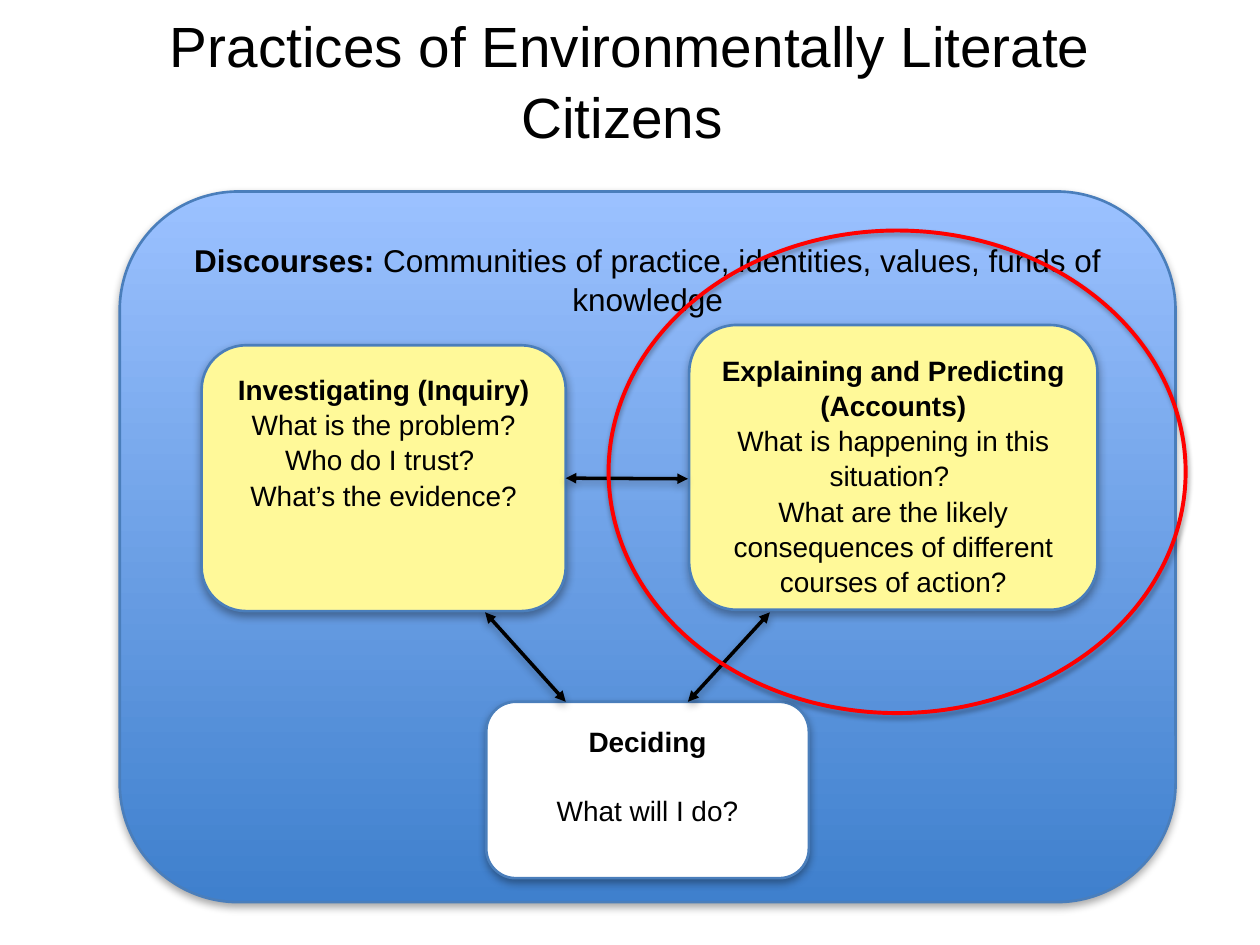
from pptx import Presentation
from pptx.dml.color import RGBColor
from pptx.enum.shapes import MSO_CONNECTOR as CXN, MSO_SHAPE as SHP
from pptx.enum.text import MSO_ANCHOR, MSO_AUTO_SIZE, PP_ALIGN
from pptx.oxml import parse_xml
from pptx.oxml.ns import nsdecls, qn
from pptx.util import Pt
from lxml.etree import SubElement

PX = 9144
FONT = "Arial"
LINE_SPACING = 1.05
BLACK = RGBColor(0x00, 0x00, 0x00)
WHITE = RGBColor(0xFF, 0xFF, 0xFF)
YELLOW = RGBColor(0xFF, 0xF9, 0x99)
RED = RGBColor(0xFF, 0x00, 0x00)
EDGE = RGBColor(0x4A, 0x7E, 0xBB)
LIGHT_BLUE = RGBColor(0x9B, 0xC1, 0xFF)
DEEP_BLUE = RGBColor(0x3F, 0x80, 0xCD)


def emu(*lengths):
    return [n * PX for n in lengths]


def add_shadow(sp, blur=5, dist=2.1):
    sp._element.spPr.append(parse_xml(
        f'<a:effectLst {nsdecls("a")}>'
        f'<a:outerShdw blurRad="{Pt(blur)}" dist="{Pt(dist)}" dir="5400000" rotWithShape="0">'
        '<a:srgbClr val="000000"><a:alpha val="35000"/></a:srgbClr>'
        '</a:outerShdw></a:effectLst>'))


def add_run(p, text, size, bold=False):
    r = p.add_run()
    r.text = text
    r.font.name = FONT
    r.font.size = Pt(size)
    r.font.bold = bold
    r.font.color.rgb = BLACK


def write_paragraphs(tf, paragraphs, size, gap=0):
    for i, runs in enumerate(paragraphs):
        p = tf.paragraphs[0] if i == 0 else tf.add_paragraph()
        p.alignment = PP_ALIGN.CENTER
        p.line_spacing = LINE_SPACING
        p.space_before = Pt(gap if i else 0)
        for text, bold in runs:
            add_run(p, text, size, bold)


def title(s, box):
    sp = s.shapes.title
    sp.left, sp.top, sp.width, sp.height = emu(*box)
    tf = sp.text_frame
    tf.auto_size = MSO_AUTO_SIZE.NONE
    tf.vertical_anchor = MSO_ANCHOR.MIDDLE
    write_paragraphs(tf, [[("Practices of Environmentally Literate Citizens ", False)]], 32.4)


def panel(shapes, box, paragraphs, size, color=None, gap=0):
    sp = shapes.add_shape(SHP.ROUNDED_RECTANGLE, *emu(*box))
    sp.adjustments[0] = 0.167
    if color is None:
        sp.fill.gradient()
        sp.fill.gradient_angle = 270
        for stop, rgb, position in zip(sp.fill.gradient_stops, (LIGHT_BLUE, DEEP_BLUE), (0, 1)):
            stop.color.rgb = rgb
            stop.position = position
    else:
        sp.fill.solid()
        sp.fill.fore_color.rgb = color
    sp.line.color.rgb = EDGE
    sp.line.width = Pt(1.5)
    add_shadow(sp)
    tf = sp.text_frame
    tf.word_wrap = True
    tf.vertical_anchor = MSO_ANCHOR.TOP
    tf.margin_left = tf.margin_top = tf.margin_right = tf.margin_bottom = 10 * PX
    write_paragraphs(tf, paragraphs, size, gap)
    return sp


def question_box(shapes, box, heading, questions, color=YELLOW, gap=0):
    paragraphs = [[(heading, True)]] + [[(q, False)] for q in questions]
    return panel(shapes, box, paragraphs, 16, color, gap)


def double_arrow(shapes, *ends):
    cxn = shapes.add_connector(CXN.STRAIGHT, *emu(*ends))
    cxn.line.color.rgb = BLACK
    cxn.line.width = Pt(2)
    ln = cxn._element.spPr.find(qn("a:ln"))
    for end in ("a:headEnd", "a:tailEnd"):
        SubElement(ln, qn(end)).set("type", "triangle")
    add_shadow(cxn)
    return cxn


def practices(s, box):
    x, y, w, h = box
    shapes = s.shapes.add_group_shape().shapes
    panel(shapes, box, [[("Discourses:", True),
          (" Communities of practice, identities, values, funds of knowledge", False)]], 18)
    question_box(shapes, (x + 452, y + 106, 324, 226), "Explaining and Predicting (Accounts)",
                 ["What is happening in this situation? ",
                  "What are the likely consequences of different courses of action?"])
    investigating = question_box(
        shapes, (x + 65, y + 122, 289, 211), "Investigating (Inquiry)",
        ["What is the problem?", "Who do I trust? ", "What’s the evidence?"])
    question_box(shapes, (x + 291, y + 405, 256, 140), "Deciding", ["What will I do?"], WHITE, 19)

    across = double_arrow(shapes, x + 354, y + 228, x + 451, y + 228)
    across.begin_connect(investigating, 3)
    double_arrow(shapes, x + 290, y + 334, x + 354, y + 405)
    double_arrow(shapes, x + 451, y + 405, x + 516, y + 334)


def highlight(s, box):
    sp = s.shapes.add_shape(SHP.OVAL, *emu(*box))
    sp.fill.background()
    sp.line.color.rgb = RED
    sp.line.width = Pt(2.25)
    add_shadow(sp, 3.1, 1.8)


def main():
    prs = Presentation()
    prs.slide_width, prs.slide_height = emu(1000, 750)
    s = prs.slides.add_slide(prs.slide_layouts[5])
    title(s, (50, 25, 900, 75))
    practices(s, (95, 152, 838, 564))
    highlight(s, (483, 183, 458, 383))
    prs.save("out.pptx")


if __name__ == "__main__":
    main()
